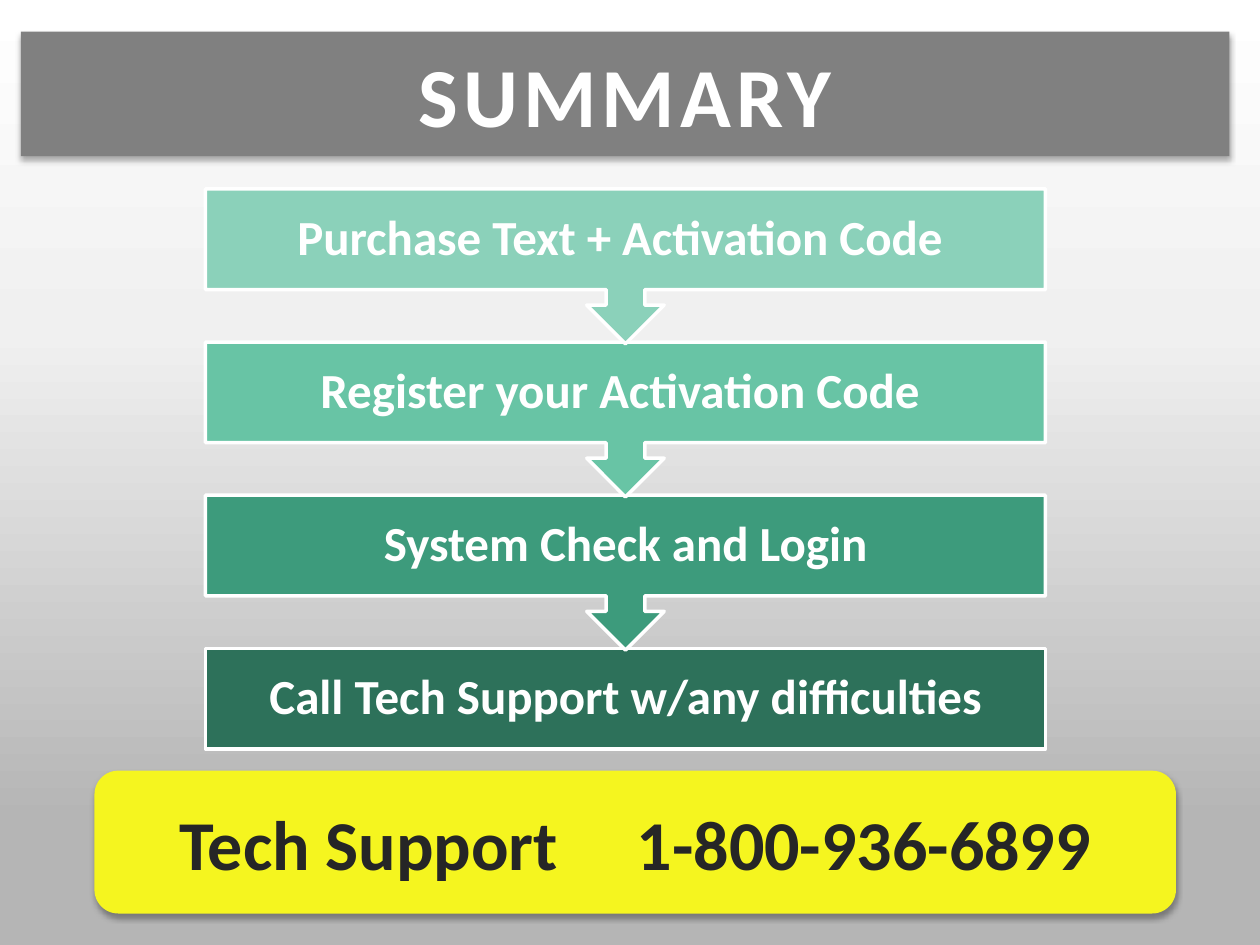
from dataclasses import dataclass
from lxml.etree import SubElement
from pptx import Presentation
from pptx.dml.color import RGBColor
from pptx.enum.shapes import MSO_SHAPE
from pptx.enum.text import MSO_ANCHOR, PP_ALIGN
from pptx.oxml.ns import qn
from pptx.util import Pt


@dataclass(frozen=True)
class Theme:
    font: str = "Calibri"
    white: str = "FFFFFF"
    dark: str = "262626"
    gray: str = "808080"
    yellow: str = "F5F51F"
    greens: tuple = ("8BD1BA", "68C4A5", "3D9B7C", "2D715A")
    stops: tuple = ((13, "B5B5B5"), (65, "F0F0F0"), (100, "FFFFFF"))
    title: int = 48
    phone: int = 40
    step: int = 28


class Deck:
    def __init__(self, theme):
        self.theme = theme
        self.file = Presentation()
        self.file.slide_width, self.file.slide_height = Pt(720), Pt(540)
        self.slide = self.file.slides.add_slide(self.file.slide_layouts[5])

    def back(self):
        fill = self.slide.background.fill
        fill.gradient()
        fill.gradient_angle = 90
        stops = self.slide.element.find(".//" + qn("a:gsLst"))
        for old in list(stops):
            stops.remove(old)
        for place, color in self.theme.stops:
            stop = SubElement(stops, qn("a:gs"), pos=str(place * 1000))
            SubElement(stop, qn("a:srgbClr"), val=color)

    def paint(self, shape, color, edge=None):
        shape.fill.solid()
        shape.fill.fore_color.rgb = RGBColor.from_string(color)
        if edge:
            shape.line.color.rgb = RGBColor.from_string(edge)
            shape.line.width = Pt(2)
        else:
            shape.line.fill.background()
        shape.shadow.inherit = False

    def shade(self, shape):
        effects = shape.element.spPr.find(qn("a:effectLst"))
        outer = SubElement(effects, qn("a:outerShdw"), blurRad=str(Pt(3.5)),
                           dist=str(Pt(2.2)), dir="5400000", rotWithShape="0")
        color = SubElement(outer, qn("a:srgbClr"), val="000000")
        SubElement(color, qn("a:alpha"), val="32000")

    def label(self, shape, parts, size, color):
        """Fill one centred line from (text, letter spacing) parts."""
        frame = shape.text_frame
        frame.word_wrap = True
        frame.vertical_anchor = MSO_ANCHOR.MIDDLE
        para = frame.paragraphs[0]
        para.alignment = PP_ALIGN.CENTER
        for text, space in parts:
            run = para.add_run()
            run.text = text
            if space:
                run._r.get_or_add_rPr().set("spc", str(space * 100))
        font = para.font
        font.name, font.size, font.bold = self.theme.font, Pt(size), True
        font.color.rgb = RGBColor.from_string(color)
        return para

    def title(self, text, x, y, w, h):
        shape = self.slide.shapes.title
        shape.left, shape.top, shape.width, shape.height = map(Pt, (x, y, w, h))
        form = SubElement(shape.element.spPr, qn("a:prstGeom"),
                          prst="roundRect")
        SubElement(form, qn("a:avLst"))
        self.paint(shape, self.theme.gray)
        self.shade(shape)
        self.label(shape, [(text, 3)], self.theme.title, self.theme.white)

    def block(self, kind, x, y, w, h, color, edge=None):
        shape = self.slide.shapes.add_shape(kind, *map(Pt, (x, y, w, h)))
        self.paint(shape, color, edge)
        return shape

    def banner(self, parts, x, y, w, h):
        shape = self.block(MSO_SHAPE.ROUNDED_RECTANGLE, x, y, w, h,
                           self.theme.yellow)
        self.shade(shape)
        self.label(shape, parts, self.theme.phone, self.theme.dark)

    def step(self, text, x, y, w, h, color, kind):
        shape = self.block(kind, x, y, w, h, color, self.theme.white)
        frame = shape.text_frame
        frame.margin_left = frame.margin_right = Pt(15.8)
        frame.margin_top = frame.margin_bottom = Pt(0)
        para = self.label(shape, [(text, 0)], self.theme.step,
                          self.theme.white)
        para.line_spacing = 0.9


def main():
    theme = Theme()
    deck = Deck(theme)
    deck.back()

    # Title bar and phone banner; one widened space parts name and number
    deck.title("SUMMARY", 12, 18, 690.5, 71.3)
    deck.banner([("Tech Support", 0), (" ", 36), ("1-800-936-6899", 0)],
                54, 440.4, 618, 81.6)

    # Steps, last one first so that each arrow tip lies over the next box
    steps = ("Purchase Text + Activation Code ",
             "Register your Activation Code ",
             "System Check and Login",
             "Call Tech Support w/any difficulties")
    last = len(steps) - 1
    for i in range(last, -1, -1):
        kind, high = MSO_SHAPE.DOWN_ARROW_CALLOUT, 88.5
        if i == last:
            kind, high = MSO_SHAPE.RECTANGLE, 57.5
        deck.step(steps[i], 117.4, 108 + i * 87.5, 480, high,
                  theme.greens[i], kind)

    deck.file.save("out.pptx")


if __name__ == "__main__":
    main()
